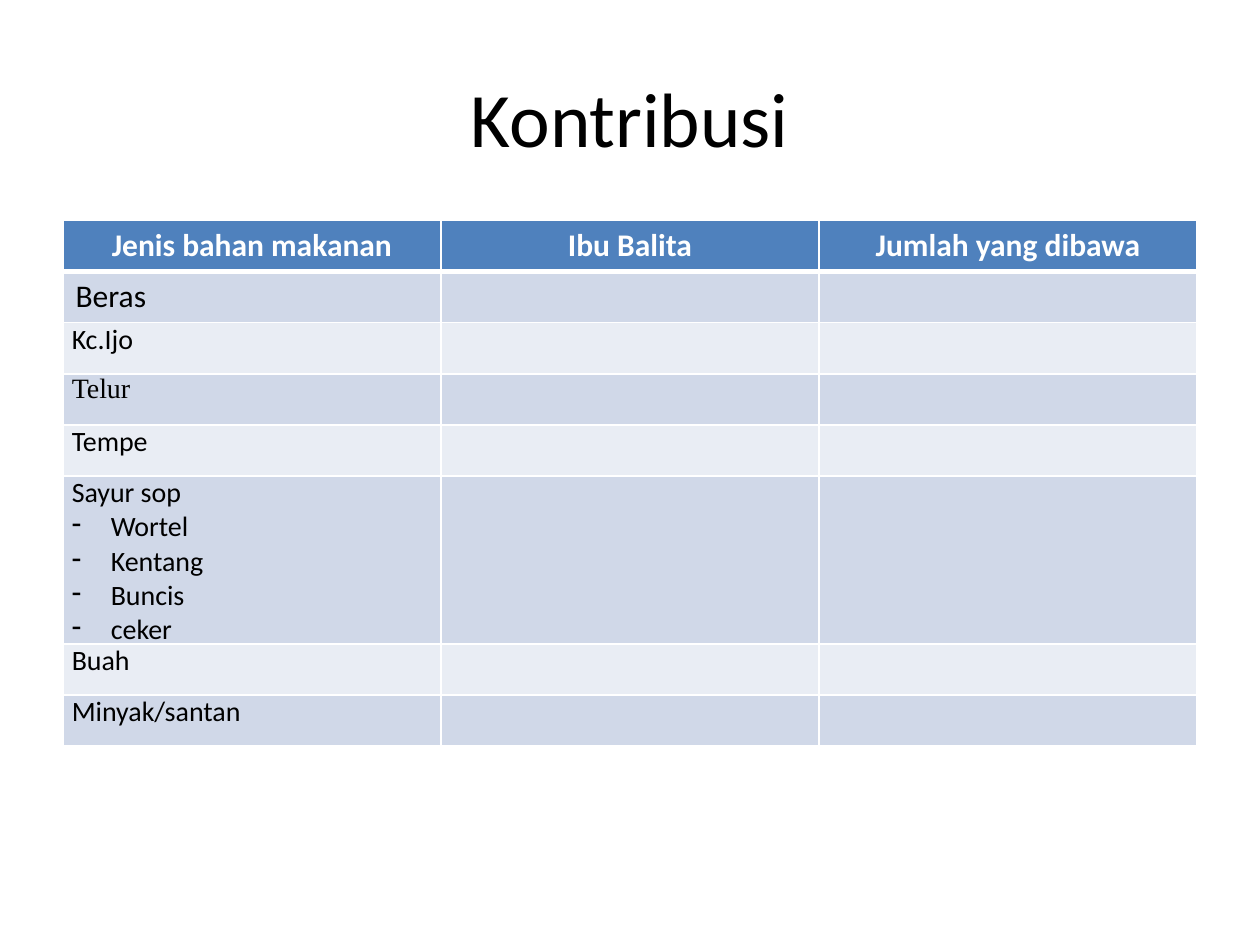
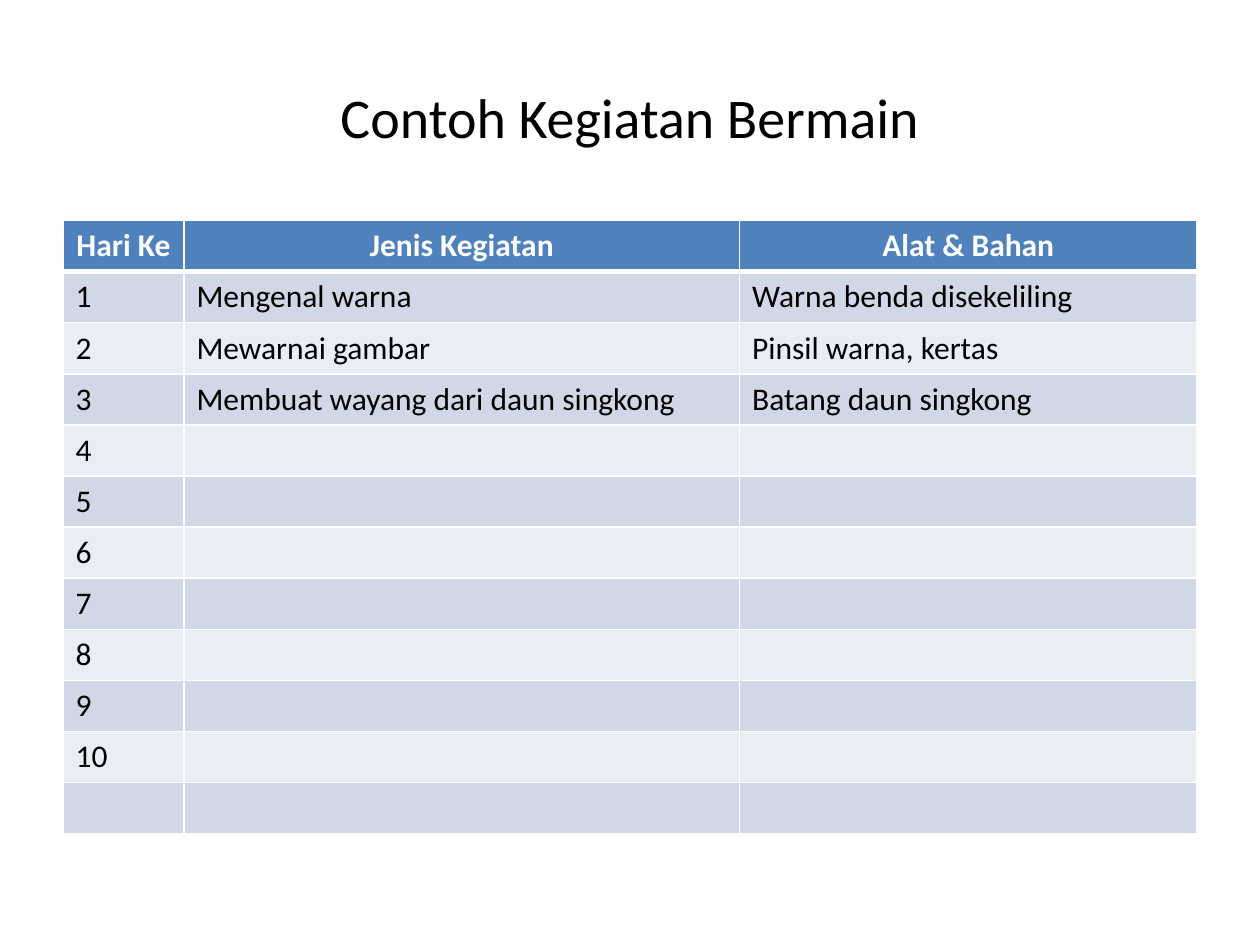
from dataclasses import dataclass

from lxml.etree import SubElement
from pptx import Presentation
from pptx.dml.color import RGBColor
from pptx.enum.text import MSO_ANCHOR as Anchor, PP_ALIGN as Align
from pptx.oxml import parse_xml
from pptx.oxml.ns import nsdecls, qn
from pptx.util import Inches, Pt


@dataclass(frozen=True)
class Theme:
    """Colours, fonts, type sizes and line widths of the deck."""
    ink: str = "000000"
    white: str = "FFFFFF"
    header: str = "4F81BD"
    bands: tuple = ("D0D8E8", "E9EDF4")
    font: str = "Calibri"
    serif: str = "Times New Roman"
    title: int = 44
    long_title: int = 32
    body: int = 18
    small: int = 16
    thin: int = 1
    thick: int = 3


THEME = Theme()
TITLE_BOX = (0.5, 0.3, 9, 1.25)
TABLE_BOX = (0.5, 1.75, 9, 4.87)
ROW_HEIGHT = TABLE_BOX[3] / 12

FOOD_HEADER = ("Jenis bahan makanan", "Ibu Balita", "Jumlah yang dibawa")
FOODS = ("Beras", "Kc.Ijo", "Telur", "Tempe",
         "Sayur sop\nWortel\nKentang\nBuncis\nceker", "Buah", "Minyak/santan")

PLAY_HEADER = ("Hari Ke", "Jenis Kegiatan", "Alat & Bahan")
PLAY_WIDTHS = (0.96, 4.41, 3.63)
ACTIVITIES = (("Mengenal warna", "Warna benda disekeliling"),
              ("Mewarnai gambar", "Pinsil warna, kertas"),
              ("Membuat wayang dari daun singkong", "Batang daun singkong"))
DAYS = 10


def style_text(tf, size, color=THEME.ink, align=Align.LEFT, bold=False, font=THEME.font):
    """Format every paragraph and run of a text frame alike."""
    for p in tf.paragraphs:
        p.alignment = align
        for r in p.runs:
            r.font.name, r.font.size, r.font.bold = font, Pt(size), bold
            r.font.color.rgb = RGBColor.from_string(color)


def add_title(s, box, text, size):
    """Add a centred title in the given box."""
    tf = s.shapes.add_textbox(*map(Inches, box)).text_frame
    tf.word_wrap = True
    tf.vertical_anchor = Anchor.MIDDLE
    tf.text = text
    style_text(tf, size, align=Align.CENTER)


def set_borders(cell, top, bottom):
    """Draw white borders round a cell."""
    widths = {"lnL": THEME.thin, "lnR": THEME.thin, "lnT": top, "lnB": bottom}
    for i, (tag, width) in enumerate(widths.items()):
        cell._tc.get_or_add_tcPr().insert(i, parse_xml(
            f'<a:{tag} {nsdecls("a")} w="{Pt(width)}"><a:solidFill>'
            f'<a:srgbClr val="{THEME.white}"/></a:solidFill></a:{tag}>'))


def add_table(s, box, header, rows, widths):
    """Add a banded table with a heading row and return it."""
    x, y, w, _ = box
    count = len(rows) + 1
    table = s.shapes.add_table(count, len(header), *map(
        Inches, (x, y, w, count * ROW_HEIGHT))).table
    for column, width in zip(table.columns, widths):
        column.width = Inches(width)
    for i, values in enumerate((header, *rows)):
        table.rows[i].height = Inches(ROW_HEIGHT)
        fill = THEME.bands[(i - 1) % 2] if i else THEME.header
        for cell, value in zip(table.rows[i].cells, values):
            cell.text_frame.text = value
            if i:
                style_text(cell.text_frame, THEME.body)
            else:
                style_text(cell.text_frame, THEME.body, THEME.white, Align.CENTER, True)
            cell.fill.solid()
            cell.fill.fore_color.rgb = RGBColor.from_string(fill)
            set_borders(cell, THEME.thick if i == 1 else THEME.thin,
                        THEME.thin if i else THEME.thick)
    return table


def add_dash(p):
    """Give a paragraph a hanging dash bullet."""
    pPr = p._p.get_or_add_pPr()
    pPr.set("marL", str(Inches(0.31)))
    pPr.set("indent", str(-Inches(0.31)))
    SubElement(pPr, qn("a:buChar"), char="-")


def style_food(cell):
    """Set a food entry small and tight, with its ingredients as a list."""
    cell.margin_left = cell.margin_right = Inches(0.07)
    cell.margin_top = cell.margin_bottom = 0
    tf = cell.text_frame
    font = THEME.serif if tf.text == "Telur" else THEME.font
    style_text(tf, THEME.small, align=Align.JUSTIFY, font=font)
    for p in tf.paragraphs[1:]:
        add_dash(p)


def contribution_slide(s):
    """Build the table of food contributions."""
    add_title(s, TITLE_BOX, "Kontribusi", THEME.title)
    rows = [(food, "", "") for food in FOODS]
    widths = [TABLE_BOX[2] / len(FOOD_HEADER)] * len(FOOD_HEADER)
    table = add_table(s, TABLE_BOX, FOOD_HEADER, rows, widths)
    for i in range(2, len(rows) + 1):
        style_food(table.cell(i, 0))


def play_slide(s):
    """Build the day-by-day table of play activities."""
    add_title(s, TITLE_BOX, "Contoh Kegiatan Bermain", THEME.long_title)
    blanks = [("", "")] * (DAYS - len(ACTIVITIES))
    rows = [(str(day), *activity)
            for day, activity in enumerate([*ACTIVITIES, *blanks], 1)]
    add_table(s, TABLE_BOX, PLAY_HEADER, [*rows, ("", "", "")], PLAY_WIDTHS)


def main():
    """Build and save the deck."""
    prs = Presentation()
    prs.slide_width, prs.slide_height = Inches(10), Inches(7.5)
    for build in (contribution_slide, play_slide):
        build(prs.slides.add_slide(prs.slide_layouts[6]))
    prs.save("out.pptx")


if __name__ == "__main__":
    main()
